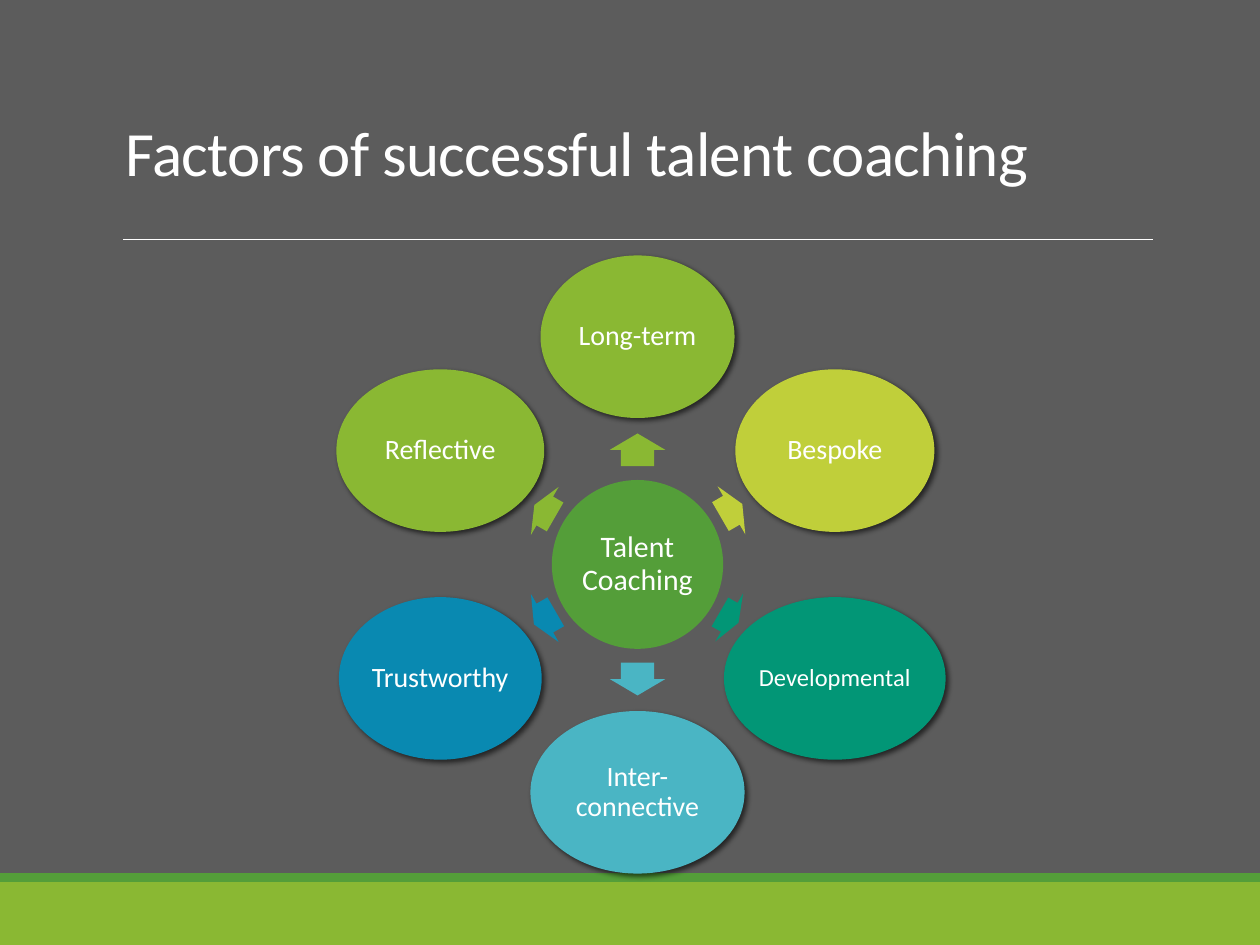
"""Build a slide of six talent coaching factors set around a central hub."""
from collections import namedtuple
from math import cos, radians, sin

from lxml.etree import SubElement
from pptx import Presentation
from pptx.dml.color import RGBColor
from pptx.enum.shapes import MSO_CONNECTOR as Connector, MSO_SHAPE as Shape
from pptx.enum.text import MSO_ANCHOR as Anchor, PP_ALIGN as Align
from pptx.oxml.ns import qn
from pptx.util import Inches, Pt

Theme = namedtuple("Theme", "font back white lime green yellow teal aqua blue title hub factor small")
theme = Theme("Calibri", "5C5C5C", "FFFFFF", "8AB833", "549E39", "C0CF3A", "029676", "4AB5C4", "0989B1",
              36, 17, 16, 14)

deck = Presentation()
deck.slide_width, deck.slide_height = Inches(10), Inches(7.5)
column, row = deck.slide_width / 100, deck.slide_height / 75
page = deck.slides.add_slide(deck.slide_layouts[6])
page.background.fill.solid()
page.background.fill.fore_color.rgb = RGBColor.from_string(theme.back)


def place(kind, center_x, center_y, width, height, fill):
    """Add a flat preset shape centred on a grid point."""
    shape = page.shapes.add_shape(kind, round((center_x - width / 2) * column), round((center_y - height / 2) * row),
                                  round(width * column), round(height * row))
    shape.fill.solid()
    shape.fill.fore_color.rgb = RGBColor.from_string(fill)
    shape.line.fill.background()
    shape.shadow.inherit = False
    return shape


def write(box, text, size, align=Align.CENTER, anchor=Anchor.MIDDLE, leading=0.9, inset=0.02, tracking=0):
    """Write one formatted paragraph into a shape."""
    frame = box.text_frame
    frame.word_wrap = True
    frame.vertical_anchor = anchor
    frame.margin_left = frame.margin_right = Inches(inset * 1)
    frame.margin_top = frame.margin_bottom = Inches(min(inset, 0.05))
    para = frame.paragraphs[0]
    para.alignment, para.line_spacing = align, leading
    span = para.add_run()
    span.text = text
    span.font.name, span.font.size = theme.font, Pt(size)
    span.font.color.rgb = RGBColor.from_string(theme.white)
    if tracking:
        span.font._element.set("spc", str(round(tracking * 100)))


place(Shape.RECTANGLE, 50, 72.5, 100, 5, theme.lime)
place(Shape.RECTANGLE, 50, 69.65, 100, 0.7, theme.green)

rule = page.shapes.add_connector(Connector.STRAIGHT, round(9.8 * column), round(19 * row),
                                 round(91.5 * column), round(19 * row))
rule.line.color.rgb = RGBColor.from_string(theme.white)
rule.line.width = Pt(0.5)
SubElement(rule._element.spPr, qn("a:effectLst"))

title = page.shapes.add_textbox(round(9 * column), round(4.7 * row), round(86.1 * column), round(10.8 * row))
write(title, "Factors of successful talent coaching", theme.title, align=Align.LEFT, anchor=Anchor.BOTTOM,
      leading=0.85, inset=0.1, tracking=-0.4)

hub_x, hub_y, orbit = 50.6, 44.8, 18.08
hub = place(Shape.OVAL, hub_x, hub_y, 13.6, 13.4, theme.green)
write(hub, "Talent Coaching", theme.hub)

Factor = namedtuple("Factor", "name width fill size arrow_length arrow_orbit")
factors = [
    Factor("Long-term", 15.4, theme.lime, theme.factor, 2.6, 9.1),
    Factor("Bespoke", 15.8, theme.yellow, theme.factor, 2, 8.6),
    Factor("Developmental", 17.6, theme.teal, theme.small, 1.7, 8.4),
    Factor("Inter-connective", 17, theme.aqua, theme.factor, 2.6, 9.1),
    Factor("Trustworthy", 16.1, theme.blue, theme.factor, 2, 8.5),
    Factor("Reflective", 16.5, theme.lime, theme.factor, 1.9, 8.5),
]
for index, factor in enumerate(factors):
    angle = index * 360 / len(factors) - 90
    across, down = cos(radians(angle)), sin(radians(angle))
    arrow = place(Shape.RIGHT_ARROW, hub_x + factor.arrow_orbit * across, hub_y + factor.arrow_orbit * down,
                  factor.arrow_length, 4.4, factor.fill)
    arrow.adjustments[0], arrow.adjustments[1] = 0.6, 0.5
    arrow.rotation = angle % 360

    oval = place(Shape.OVAL, hub_x + orbit * across, hub_y + orbit * down, factor.width, 12.9, factor.fill)
    write(oval, factor.name, factor.size)
    effects = oval._element.spPr.find(qn("a:effectLst"))
    shadow = SubElement(effects, qn("a:outerShdw"), blurRad=str(Pt(3)), dist=str(Pt(2)),
                        dir=str(45 * 60000), algn="ctr", rotWithShape="0")
    tint = SubElement(shadow, qn("a:srgbClr"), val="000000")
    SubElement(tint, qn("a:alpha"), val="60000")

deck.save("out.pptx")
